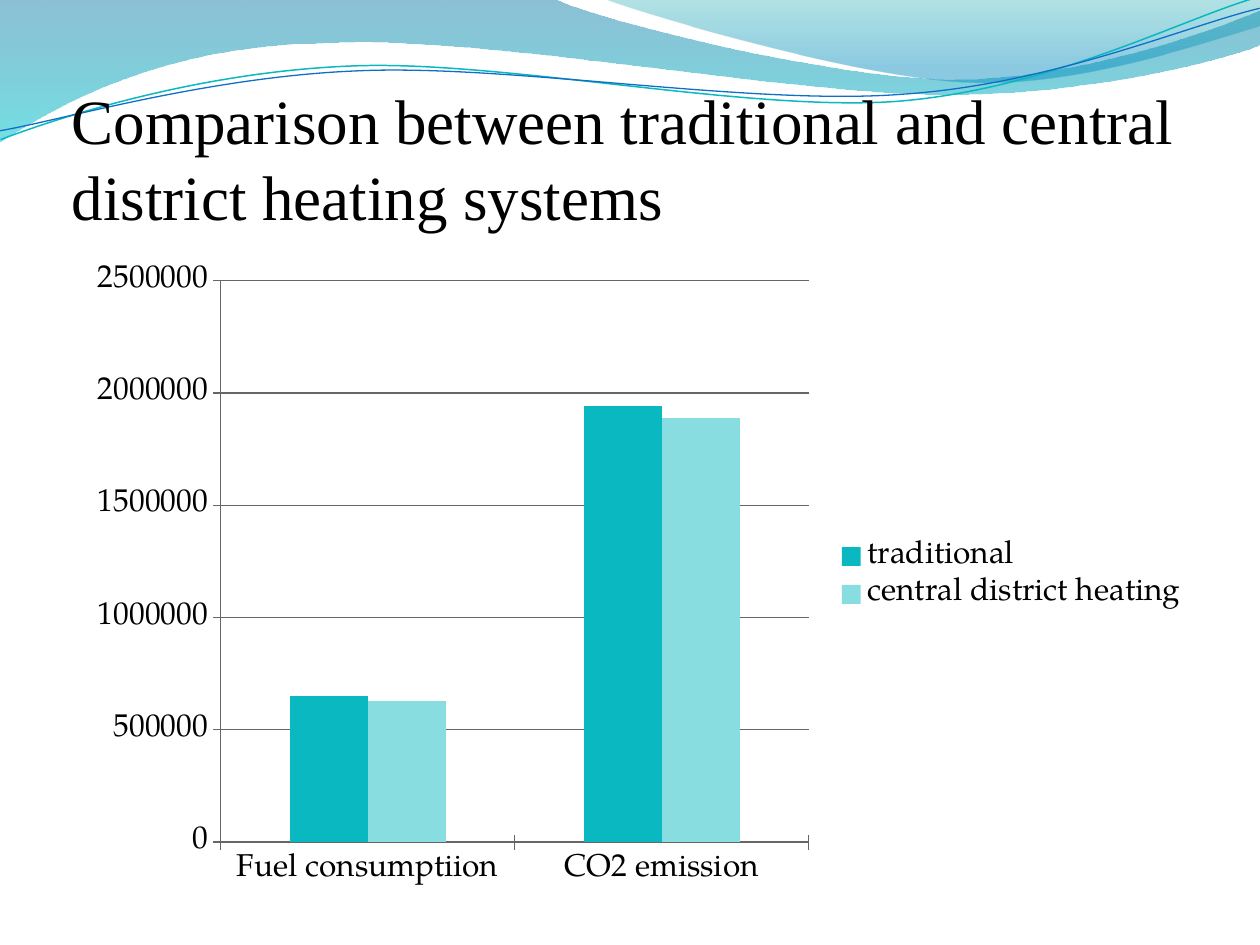
from lxml import etree
from pptx import Presentation
from pptx import util as u
from pptx.chart.data import CategoryChartData
from pptx.dml.color import RGBColor
from pptx.enum import chart as charts, text
from pptx.oxml import ns

PX = 914400 / 126
COLORS = {"black": "000000", "grid": "666666", "teal": "0AB8C1", "pale": "88DDE1",
          "wave teal": "0AB8BF", "wave blue": "0F6FC6"}
TITLE = "Comparison between traditional and central district heating systems"
TITLE_BOX = (72, 76, 1134, 157)
TITLE_FONT = {"name": "Times New Roman", "size": u.Pt(36)}

CHART_BOX = (75, 252, 1142, 647)
CHART_FONT = {"name": "TeX Gyre Pagella", "size": u.Pt(18)}
CATEGORIES = ["Fuel consumptiion", "CO2 emission"]
SERIES = [("traditional ", (650000, 1940000), "teal"),
          ("central district heating  ", (630000, 1890000), "pale")]

# Each segment holds one point (line) or three points (cubic curve).
# Gradient stops: position %, colour, opacity %.
BANDS = [
    {"start": (0, 0),
     "segments": [[(554, -1)],
                  [(600, 21), (837, 79), (955, 79)],
                  [(1075, 79), (1207, 33), (1260, 11)],
                  [(1261, 45)],
                  [(1238, 55), (1096, 96), (940, 94)],
                  [(784, 94), (481, 35), (324, 43)],
                  [(163, 45), (58, 105), (-1, 142)],
                  [(0, 0)]],
     "stops": [(0, "0074A1", 45), (100, "00C6CF", 55)]},
    {"start": (604, -1),
     "segments": [[(641, 14), (859, 78), (969, 82)],
                  [(1079, 87), (1211, 40), (1260, 26)],
                  [(1260, 0)],
                  [(604, -1)]],
     "stops": [(0, "00A1A9", 30), (80, "008BBF", 45)]},
]
WAVE_ROTATION = 357.3
WAVES = [
    {"start": (-2, 110),
     "segments": [[(59, 90), (199, 52), (350, 53)],
                  [(499, 53), (745, 118), (896, 114)],
                  [(1049, 109), (1184, 45), (1260, 27)]],
     "color": "wave teal", "width": 0.85},
    {"start": (-2, 101),
     "segments": [[(57, 94), (207, 57), (357, 58)],
                  [(509, 58), (750, 112), (902, 107)],
                  [(1052, 104), (1188, 52), (1262, 38)]],
     "color": "wave blue", "width": 0.75},
]


def emu(values):
    return [round(value * PX) for value in values]


def rgb(name):
    return RGBColor.from_string(COLORS[name])


def assign(target, values):
    for name, value in values.items():
        setattr(target, name, value)


def add_outline(slide, outline, close):
    """Draw straight segments, then turn the three-point ones into curves."""
    segments = outline["segments"]
    builder = slide.shapes.build_freeform(*emu(outline["start"]))
    builder.add_line_segments([emu(segment[-1]) for segment in segments], close=close)
    shape = builder.convert_to_shape()
    shape.shadow.inherit = False
    lines = list(shape._element.spPr.iter(ns.qn("a:lnTo")))
    for line, segment in zip(lines, segments):
        if len(segment) == 1:
            continue
        curve = etree.Element(ns.qn("a:cubicBezTo"))
        for x, y in map(emu, segment):
            etree.SubElement(curve, ns.qn("a:pt"),
                             x=str(x - shape.left), y=str(y - shape.top))
        line.getparent().replace(line, curve)
    return shape


def fill_gradient(shape, stops):
    """Fill from top to bottom with partly transparent stops."""
    gradient = etree.Element(ns.qn("a:gradFill"), rotWithShape="1")
    stop_list = etree.SubElement(gradient, ns.qn("a:gsLst"))
    for position, color, opacity in stops:
        stop = etree.SubElement(stop_list, ns.qn("a:gs"), pos=str(position * 1000))
        value = etree.SubElement(stop, ns.qn("a:srgbClr"), val=color)
        etree.SubElement(value, ns.qn("a:alpha"), val=str(opacity * 1000))
    etree.SubElement(gradient, ns.qn("a:lin"), ang="5400000", scaled="0")
    shape._element.spPr.find(ns.qn("a:custGeom")).addnext(gradient)


def add_waves(slide):
    for band in BANDS:
        shape = add_outline(slide, band, True)
        shape.line.fill.background()
        fill_gradient(shape, band["stops"])
    for wave in WAVES:
        shape = add_outline(slide, wave, False)
        shape.rotation = WAVE_ROTATION
        shape.fill.background()
        shape.line.color.rgb = rgb(wave["color"])
        shape.line.width = u.Pt(wave["width"])


def add_title(slide):
    frame = slide.shapes.add_textbox(*emu(TITLE_BOX)).text_frame
    assign(frame, {"word_wrap": True, "vertical_anchor": text.MSO_ANCHOR.BOTTOM,
                   "margin_left": 0, "margin_right": 0,
                   "margin_top": u.Inches(0.05), "margin_bottom": 0})
    run = frame.paragraphs[0].add_run()
    run.text = TITLE
    assign(run.font, TITLE_FONT)
    run.font.color.rgb = rgb("black")


def add_comparison_chart(slide):
    data = CategoryChartData(number_format="General")
    data.categories = CATEGORIES
    for name, values, _ in SERIES:
        data.add_series(name, values)
    chart = slide.shapes.add_chart(charts.XL_CHART_TYPE.COLUMN_CLUSTERED,
                                   *emu(CHART_BOX), data).chart
    assign(chart, {"has_title": False, "has_legend": True})
    assign(chart.legend, {"position": charts.XL_LEGEND_POSITION.RIGHT,
                          "include_in_layout": False})
    assign(chart.font, CHART_FONT)
    chart.font.color.rgb = rgb("black")

    plot = chart.plots[0]
    assign(plot, {"gap_width": 177, "overlap": 0, "vary_by_categories": False})
    for series, (_, _, color) in zip(plot.series, SERIES):
        series.format.fill.solid()
        series.format.fill.fore_color.rgb = rgb(color)

    assign(chart.value_axis, {"minimum_scale": 0, "maximum_scale": 2500000,
                              "major_unit": 500000, "has_major_gridlines": True})
    for axis in (chart.category_axis, chart.value_axis):
        axis.major_tick_mark = charts.XL_TICK_MARK.CROSS
    for part in (chart.category_axis, chart.value_axis, chart.value_axis.major_gridlines):
        part.format.line.color.rgb = rgb("grid")
        part.format.line.width = u.Pt(0.75)


def main():
    presentation = Presentation()
    assign(presentation, {"slide_width": u.Inches(10), "slide_height": u.Inches(7.5)})
    slide = presentation.slides.add_slide(presentation.slide_layouts[6])
    add_waves(slide)
    add_title(slide)
    add_comparison_chart(slide)
    presentation.save("out.pptx")


if __name__ == "__main__":
    main()
